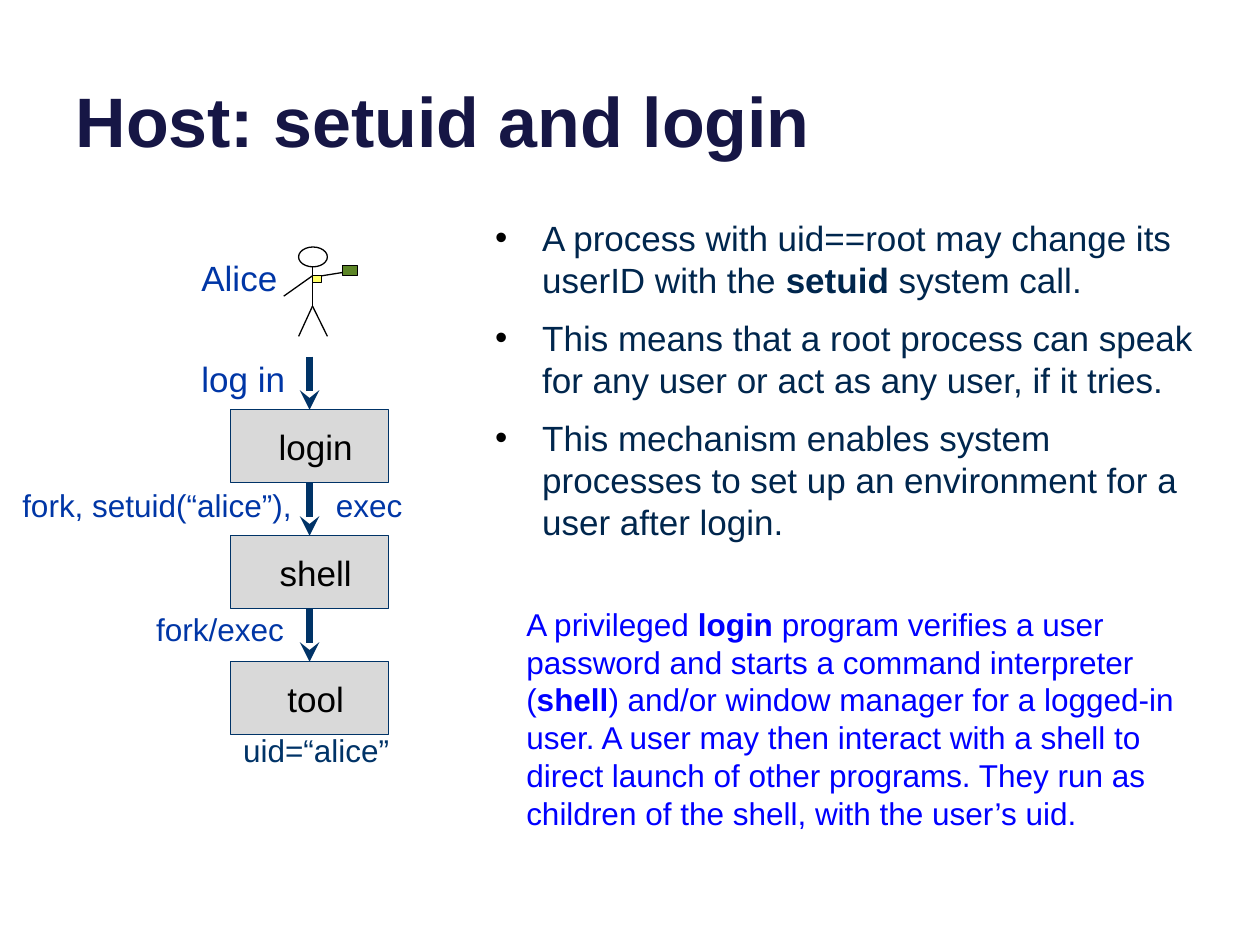
from lxml import etree
from pptx import Presentation
from pptx.dml.color import RGBColor
from pptx.enum.shapes import MSO_CONNECTOR, MSO_SHAPE
from pptx.enum.text import MSO_ANCHOR, PP_ALIGN
from pptx.oxml.ns import qn
from pptx.util import Cm, Pt

COLORS = {
    "title": "161645", "body": "00264D", "label": "0036A6", "navy": "003367",
    "note": "0000FF", "black": "000000", "box": "D9D9D9",
    "green": "5C8526", "yellow": "FFFF66",
}


def write(para, parts, size, color):
    """Fill a paragraph with parts; every second part is bold."""
    for index, part in enumerate(parts):
        span = para.add_run()
        span.text = part
        span.font.name = "Arial"
        span.font.size = Pt(size)
        span.font.bold = index % 2 == 1
        span.font.color.rgb = RGBColor.from_string(COLORS[color])


def style(shape, line, fill=None, width=0.75):
    """Give a shape or connector its line and fill, without a shadow."""
    shape.line.color.rgb = RGBColor.from_string(COLORS[line])
    shape.line.width = Pt(width)
    if hasattr(shape, "begin_connect"):
        etree.SubElement(shape._element.spPr, qn("a:effectLst"))
        return
    shape.shadow.inherit = False
    if fill:
        shape.fill.solid()
        shape.fill.fore_color.rgb = RGBColor.from_string(COLORS[fill])
    else:
        shape.fill.background()


deck = Presentation()
deck.slide_width, deck.slide_height = Cm(25.4), Cm(19.05)
page = deck.slides.add_slide(deck.slide_layouts[5])

# Title
title = page.shapes.title
title.left, title.top, title.width, title.height = Cm(1.27), Cm(-0.94), Cm(22.86), Cm(4.32)
title.text_frame.text = "Host: setuid and login"
title.text_frame.vertical_anchor = MSO_ANCHOR.BOTTOM
para = title.text_frame.paragraphs[0]
para.alignment = PP_ALIGN.LEFT
font = para.runs[0].font
font.name, font.size, font.bold = "Arial", Pt(40), True
font.color.rgb = RGBColor.from_string(COLORS["title"])

# Bullets
bullets = [
    ["A process with uid==root may change its userID with the ", "setuid", " system call."],
    ["This means that a root process can speak for any user or act as any user, if it tries."],
    ["This mechanism enables system processes to set up an environment for a user after login."],
]
frame = page.shapes.add_textbox(Cm(9.73), Cm(4.24), Cm(14.81), Cm(9.53)).text_frame
frame.word_wrap = True
for index, parts in enumerate(bullets):
    para = frame.add_paragraph() if index else frame.paragraphs[0]
    properties = para._p.get_or_add_pPr()
    properties.set("marL", str(Cm(0.95)))
    properties.set("indent", str(Cm(-0.95)))
    bullet_color = etree.SubElement(properties, qn("a:buClr"))
    etree.SubElement(bullet_color, qn("a:srgbClr"), val=COLORS["black"])
    etree.SubElement(properties, qn("a:buFont"), typeface="Arial")
    etree.SubElement(properties, qn("a:buChar"), char="•")
    if index:
        para.space_before = Pt(9)
    write(para, parts, 20, "body")

# Process chain, each box reached by an arrow from above
BOX_LEFT, BOX_TOP, BOX_WIDTH, BOX_HEIGHT, BOX_STEP = 4.65, 8.26, 3.18, 1.47, 2.54
middle = Cm(BOX_LEFT + BOX_WIDTH / 2)
previous = None
for index, name in enumerate(["login", "shell", "tool"]):
    top = BOX_TOP + index * BOX_STEP
    box = page.shapes.add_shape(
        MSO_SHAPE.RECTANGLE, Cm(BOX_LEFT), Cm(top), Cm(BOX_WIDTH), Cm(BOX_HEIGHT))
    style(box, "navy", "box")
    frame = box.text_frame
    frame.margin_left = Cm(0.5)
    frame.vertical_anchor = MSO_ANCHOR.MIDDLE
    frame.paragraphs[0].alignment = PP_ALIGN.CENTER
    write(frame.paragraphs[0], [name], 20, "black")

    arrow = page.shapes.add_connector(
        MSO_CONNECTOR.STRAIGHT, middle, Cm(top - BOX_STEP + BOX_HEIGHT), middle, Cm(top))
    if previous is not None:
        arrow.begin_connect(previous, 2)
    arrow.end_connect(box, 0)
    style(arrow, "navy", width=3.75)
    etree.SubElement(arrow.line._get_or_add_ln(), qn("a:tailEnd"), type="stealth")
    previous = box

# Labels: text, left, top, width, size, colour
labels = [
    ("Alice", 3.81, 5.18, 2.34, 20, "label"),
    ("log in", 3.81, 7.21, 2.34, 20, "label"),
    ("fork, setuid(“alice”),", 0.2, 9.8, 6.2, 18, "label"),
    ("exec", 6.52, 9.8, 2.2, 18, "label"),
    ("fork/exec", 2.9, 12.29, 3.18, 18, "label"),
    ("uid=“alice”", 4.65, 14.73, 4.65, 18, "navy"),
]
for text, left, top, width, size, color in labels:
    frame = page.shapes.add_textbox(Cm(left), Cm(top), Cm(width), Cm(size * 0.05)).text_frame
    frame.word_wrap = True
    frame.paragraphs[0].line_spacing = 0.85
    write(frame.paragraphs[0], [text], size, color)

# Alice as a stick figure
alice = page.shapes.add_group_shape()
limbs = [
    (6.3, 5.38, 6.3, 6.17),  # body
    (6.02, 6.78, 6.3, 6.17),  # legs
    (6.6, 6.78, 6.3, 6.17),
    (7.11, 5.46, 6.3, 5.59),  # arms
    (5.72, 5.97, 6.3, 5.56),
]
for limb in limbs:
    style(alice.shapes.add_connector(MSO_CONNECTOR.STRAIGHT, *map(Cm, limb)), "black")
parts = [
    (MSO_SHAPE.OVAL, (6.02, 4.98, 0.58, 0.4), None),  # head
    (MSO_SHAPE.RECTANGLE, (6.91, 5.36, 0.3, 0.2), "green"),
    (MSO_SHAPE.RECTANGLE, (6.3, 5.56, 0.18, 0.13), "yellow"),
]
for kind, place, fill in parts:
    style(alice.shapes.add_shape(kind, *map(Cm, place)), "black", fill)

# Note
note = [
    "A privileged ", "login",
    " program verifies a user password and starts a command interpreter (", "shell",
    ") and/or window manager for a logged-in user. A user may then interact with a shell "
    "to direct launch of other programs. They run as children of the shell, "
    "with the user’s uid.",
]
frame = page.shapes.add_textbox(Cm(10.36), Cm(12.07), Cm(14.4), Cm(5.64)).text_frame
frame.word_wrap = True
write(frame.paragraphs[0], note, 18, "note")

deck.save("out.pptx")
